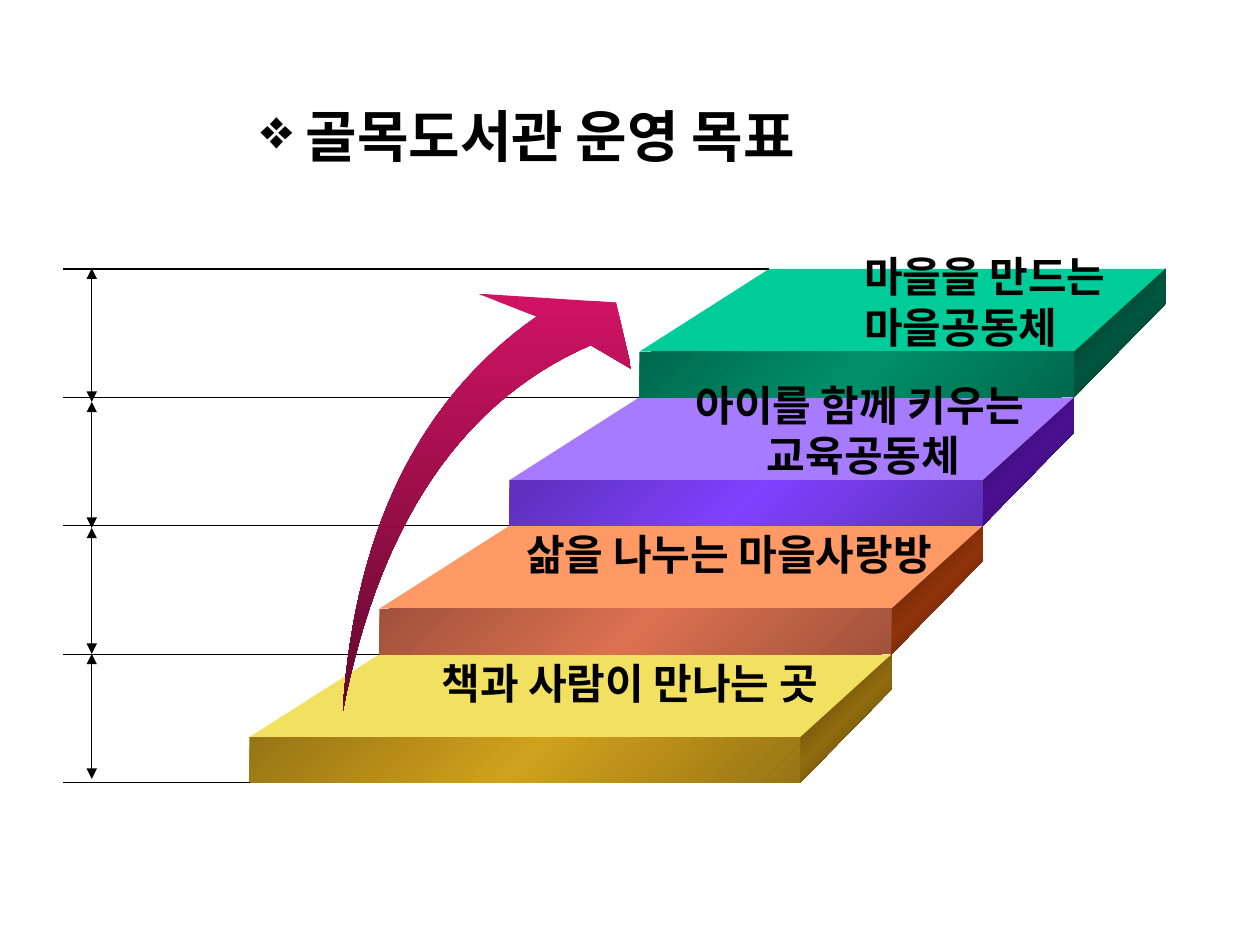
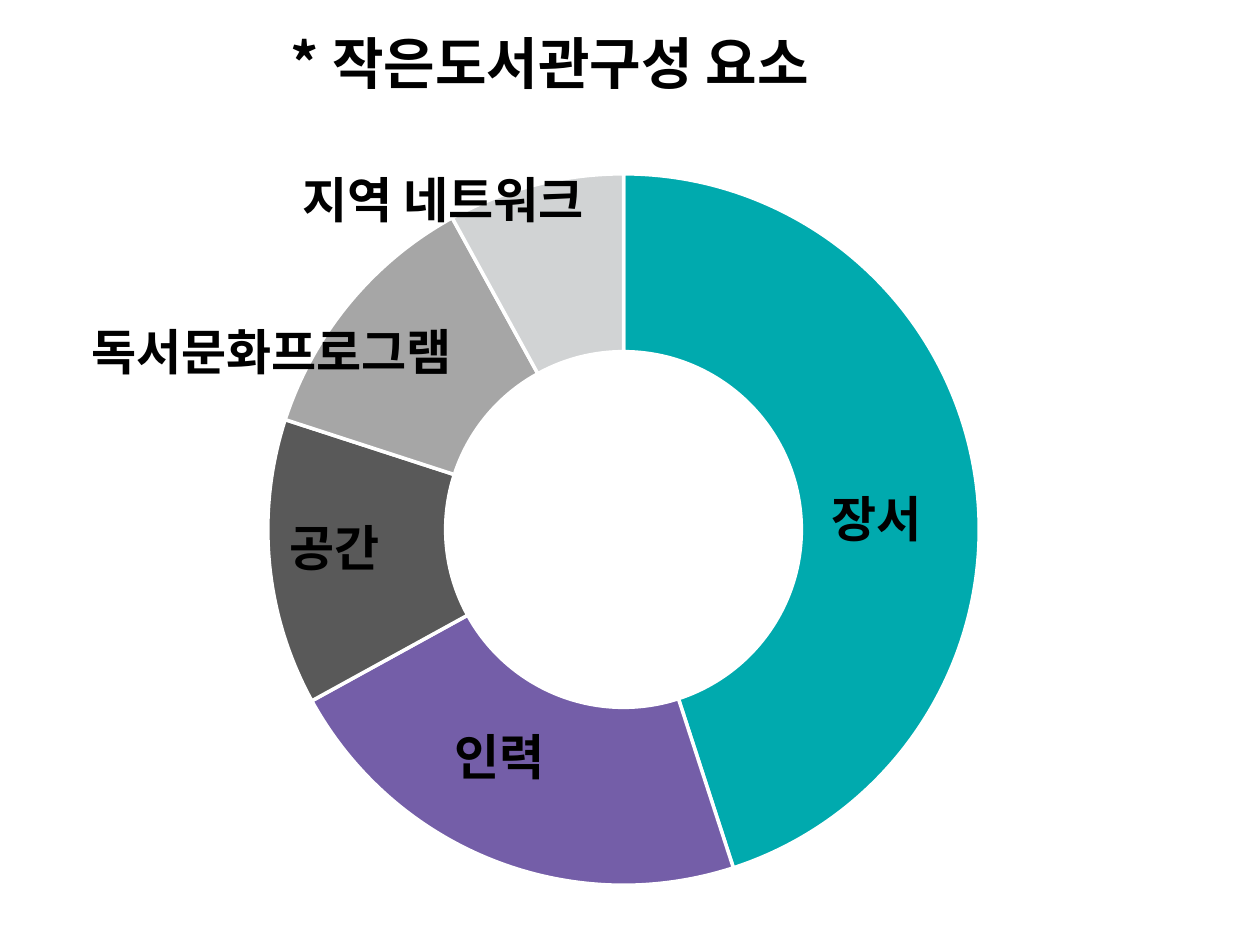
import lxml.etree
import pptx
import pptx.chart.data
import pptx.dml.color
import pptx.enum.chart
import pptx.enum.shapes
import pptx.enum.text
import pptx.oxml.ns
import pptx.util

Cm, Pt, qn = pptx.util.Cm, pptx.util.Pt, pptx.oxml.ns.qn
ALIGN, ANCHOR = pptx.enum.text.PP_ALIGN, pptx.enum.text.MSO_ANCHOR

FONT = "Noto Sans CJK KR"
BLACK, WHITE = "000000", "FFFFFF"
TITLE_SIZE, STEP_SIZE, ELEMENT_SIZE = 32, 24, 28

GOALS_TITLE = {"text": " 골목도서관 운영 목표", "box": (2.49, 1.93, 16.31, 1.35),
               "align": ALIGN.CENTER, "bullet": "❖"}
ELEMENTS_TITLE = {"text": "* 작은도서관구성 요소", "box": (3.76, 0.56, 12.8, 1.37),
                  "align": ALIGN.RIGHT, "anchor": ANCHOR.MIDDLE}

STEPS = [
    {"top": "F2E160", "front": ("977514", "D0A11C", "977514"),
     "side": ("433206", "906B0E", "433206"), "box": (6.91, 13.13, 10.41, 1.07),
     "lines": [("책과 사람이 만나는 곳", 1.74)]},
    {"top": "FF9966", "front": ("A0523A", "DC7150", "A0523A"),
     "side": ("431805", "90330A", "431805"), "box": (9.09, 10.52, 10.54, 1.27),
     "lines": [("삶을 나누는 마을사랑방", 1.27)]},
    {"top": "A77BFF", "front": ("5D2FB9", "8041FF", "5D2FB9"),
     "side": ("230744", "4B1092", "230744"), "box": (12.5, 7.52, 9.12, 2.08),
     "lines": [("아이를 함께 키우는", 1.27), ("교육공동체", 2.71)]},
    {"top": "00CC99", "front": ("00684D", "00906A", "00684D"),
     "side": ("00281D", "00563F", "00281D"), "box": (15.9, 4.93, 7.21, 2.08),
     "lines": [("마을을 만드는", 1.27), ("마을공동체", 1.27)]},
]
STAIR_LEFT, STAIR_RIGHT, STAIR_BASE = 5.03, 16.13, 15.78
LEFT_SHIFT, RIGHT_SHIFT, RISE = 2.62, 1.84, 2.59
FRONT_HEIGHT, SIDE_HEIGHT = 0.92, 0.71
RULER_LEFT, RULER_ARROW = 1.27, 1.85
RULER_MARKS = [5.41, 8.1, 10.64, 13.18, 15.7]

ARROW_TIP = (6.91, 14.35)
ARROW_OUTER = [ARROW_TIP, (7.26, 8.89), (10.82, 6.38)]
ARROW_HEAD = [(9.63, 5.92), (12.42, 6.1), (12.73, 7.44)]
ARROW_INNER = [(11.91, 6.96), (8.01, 8.65), ARROW_TIP]
ARROW_COLOURS = ("D11364", "61092E")

SHARES = [(45, "00AAAE"), (22, "745EA8"), (13, "595959"), (12, "A6A6A6"), (8, "D1D3D4")]
RING_BOX = (3.56, 2.87, 18.39, 15.16)
RING_LAYOUT = {"x": 0.1, "y": 0.04, "w": 0.78, "h": 0.95}
ELEMENTS = [
    ("장서", (16.51, 9.73, 2.79, 1.45)),
    ("인력", (8.92, 14.53, 3.61, 1.45)),
    ("공간", (5.59, 10.31, 2.9, 1.45)),
    ("독서문화프로그램", (1.6, 6.35, 9.19, 1.45)),
    ("지역 네트워크", (5.84, 3.3, 6.91, 1.45)),
]


def rgb(colour):
    return pptx.dml.color.RGBColor.from_string(colour)


def child(parent, tag, **attributes):
    element = lxml.etree.SubElement(parent, qn(tag))
    for name, value in attributes.items():
        element.set(name, str(value))
    return element


def apply(target, values):
    for name, value in values.items():
        setattr(target, name, value)


def paint(shape, colours, angle=45):
    shape.shadow.inherit = False
    shape.line.fill.background()
    if isinstance(colours, str):
        shape.fill.solid()
        shape.fill.fore_color.rgb = rgb(colours)
        return
    shape.fill.gradient()
    shape.fill.gradient_angle = 360 - angle
    stops = shape._element.spPr.find(qn("a:gradFill")).find(qn("a:gsLst"))
    for stop in list(stops):
        stops.remove(stop)
    for order, colour in enumerate(colours):
        stop = child(stops, "a:gs", pos=100000 * order // (len(colours) - 1))
        child(stop, "a:srgbClr", val=colour)


def add_outline(slide, points, colours, angle=45):
    corners = [(Cm(x), Cm(y)) for x, y in points]
    builder = slide.shapes.build_freeform(*corners[0])
    builder.add_line_segments(corners[1:], close=True)
    paint(builder.convert_to_shape(), colours, angle)


def add_line(slide, start, end, arrows=False):
    line = slide.shapes.add_connector(
        pptx.enum.shapes.MSO_CONNECTOR.STRAIGHT, *map(Cm, start + end))
    apply(line.line, {"width": Pt(0.75)})
    line.line.color.rgb = rgb(BLACK)
    if arrows:
        for tag in ("a:headEnd", "a:tailEnd"):
            child(line.line._get_or_add_ln(), tag, type="triangle")
    child(line._element.spPr, "a:effectLst")


def add_text(slide, box, lines, size, align=ALIGN.LEFT, anchor=ANCHOR.TOP, bullet=None):
    frame = slide.shapes.add_textbox(*map(Cm, box)).text_frame
    apply(frame, {"word_wrap": True, "vertical_anchor": anchor})
    for order, (text, indent) in enumerate(lines):
        paragraph = frame.add_paragraph() if order else frame.paragraphs[0]
        paragraph.alignment = align
        properties = paragraph._p.get_or_add_pPr()
        properties.set("marL", str(Cm(indent)))
        if bullet:
            child(properties, "a:buChar", char=bullet)
        run = paragraph.add_run()
        run.text = text
        apply(run.font, {"size": Pt(size), "bold": True, "name": FONT})
        run.font.color.rgb = rgb(BLACK)
        child(run._r.get_or_add_rPr(), "a:ea", typeface=FONT)


def add_title(slide, title):
    add_text(slide, title["box"], [(title["text"], 0)], TITLE_SIZE, title["align"],
             title.get("anchor", ANCHOR.TOP), title.get("bullet"))


def add_step(slide, level, step):
    left, right = STAIR_LEFT + LEFT_SHIFT * level, STAIR_RIGHT + RIGHT_SHIFT * level
    base = STAIR_BASE - RISE * level
    back, edge = base - RISE, base - FRONT_HEIGHT
    back_left, back_right = left + LEFT_SHIFT, right + RIGHT_SHIFT
    add_outline(slide, [(back_right, back + SIDE_HEIGHT), (right, base), (right, edge),
                        (back_right, back)], step["side"])
    add_outline(slide, [(right, edge), (left, edge), (back_left, back),
                        (back_right, back)], step["top"])
    front = slide.shapes.add_shape(
        pptx.enum.shapes.MSO_SHAPE.RECTANGLE,
        *map(Cm, (left, edge, right - left, FRONT_HEIGHT)))
    paint(front, step["front"])


def curve(start, control, end, pieces=30):
    return [tuple((1 - t) ** 2 * a + 2 * t * (1 - t) * b + t ** 2 * c
                  for a, b, c in zip(start, control, end))
            for t in (piece / pieces for piece in range(pieces + 1))]


def build_goals(slide):
    for level, step in enumerate(STEPS):
        add_step(slide, level, step)
    for level in range(len(STEPS) + 1):
        height = STAIR_BASE - RISE * level
        add_line(slide, (STAIR_LEFT + LEFT_SHIFT * level, height), (RULER_LEFT, height))
    for upper, lower in zip(RULER_MARKS, RULER_MARKS[1:]):
        add_line(slide, (RULER_ARROW, upper), (RULER_ARROW, lower), arrows=True)
    add_outline(slide, curve(*ARROW_OUTER) + ARROW_HEAD + curve(*ARROW_INNER)[:-1],
                ARROW_COLOURS, 90)
    for step in STEPS:
        add_text(slide, step["box"], step["lines"], STEP_SIZE)
    add_title(slide, GOALS_TITLE)


def build_elements(slide):
    data = pptx.chart.data.CategoryChartData()
    data.categories = [str(order + 1) for order in range(len(SHARES))]
    data.add_series("Series 1", [share for share, _ in SHARES])
    ring = slide.shapes.add_chart(
        pptx.enum.chart.XL_CHART_TYPE.DOUGHNUT, *map(Cm, RING_BOX), data).chart
    apply(ring, {"has_legend": False, "has_title": False})
    apply(ring.font, {"size": Pt(18), "name": FONT})
    ring.font.color.rgb = rgb(BLACK)
    plot = ring.plots[0]
    plot.vary_by_categories = True
    plot._element.find(qn("c:holeSize")).set("val", "50")
    for order, (_, colour) in enumerate(SHARES):
        slice_format = plot.series[0].points[order].format
        slice_format.fill.solid()
        slice_format.fill.fore_color.rgb = rgb(colour)
        slice_format.line.color.rgb = rgb(WHITE)
        slice_format.line.width = Pt(2)
    area = plot._element.getparent()
    for old in area.findall(qn("c:layout")):
        area.remove(old)
    layout = lxml.etree.Element(qn("c:layout"))
    area.insert(0, layout)
    manual = child(layout, "c:manualLayout")
    child(manual, "c:layoutTarget", val="inner")
    for side in "xy":
        child(manual, f"c:{side}Mode", val="edge")
    for side, value in RING_LAYOUT.items():
        child(manual, f"c:{side}", val=value)
    for name, box in ELEMENTS:
        add_text(slide, box, [(name, 0)], ELEMENT_SIZE)
    add_title(slide, ELEMENTS_TITLE)


def main():
    deck = pptx.Presentation()
    apply(deck, {"slide_width": Cm(25.4), "slide_height": Cm(19.05)})
    for build in (build_goals, build_elements):
        build(deck.slides.add_slide(deck.slide_layouts[6]))
    deck.save("out.pptx")


if __name__ == "__main__":
    main()
